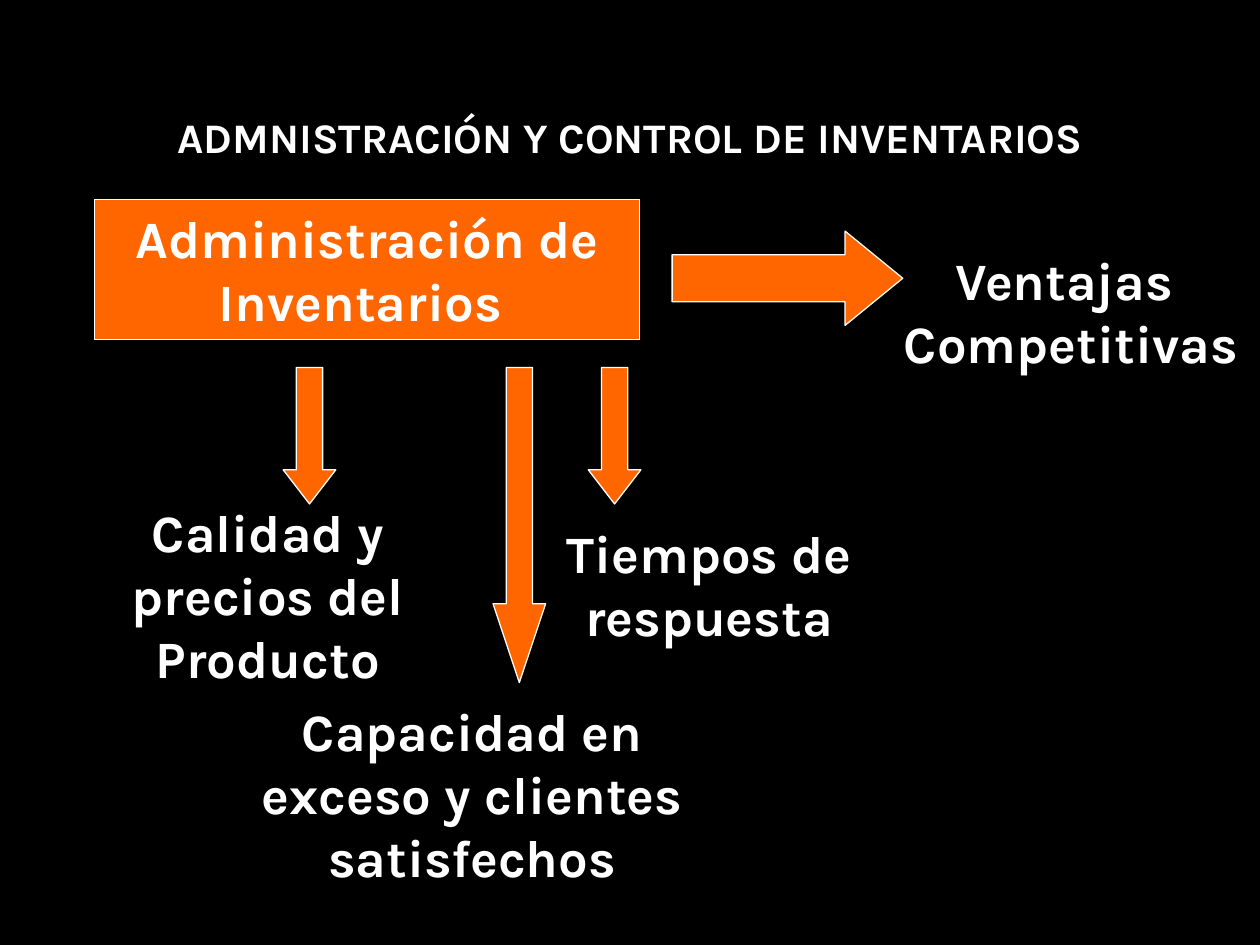
from pptx import Presentation
from pptx.dml.color import RGBColor
from pptx.enum.shapes import MSO_SHAPE
from pptx.enum.text import MSO_ANCHOR, PP_ALIGN
from pptx.util import Cm, Pt

COLORS = {"back": "000000", "fill": "FF6600", "text": "FFFFFF"}
FONT = "Karla"


def color(name):
    return RGBColor.from_string(COLORS[name])


def write(frame, lines, size):
    frame.word_wrap = True
    frame.vertical_anchor = MSO_ANCHOR.TOP
    for i, line in enumerate(lines):
        para = frame.paragraphs[0] if i == 0 else frame.add_paragraph()
        para.alignment = PP_ALIGN.CENTER
        run = para.add_run()
        run.text = line
        font = run.font
        font.name, font.size, font.bold = FONT, Pt(size), True
        font.color.rgb = color("text")


def label(slide, box, *lines, size=30):
    area = slide.shapes.add_textbox(*map(Cm, box))
    write(area.text_frame, lines, size)


def block(slide, kind, box):
    shape = slide.shapes.add_shape(kind, *map(Cm, box))
    shape.shadow.inherit = False
    shape.fill.solid()
    shape.fill.fore_color.rgb = color("fill")
    shape.line.color.rgb = color("text")
    shape.line.width = Pt(0.75)
    return shape


def arrow(slide, kind, box):
    """The head takes a quarter of the arrow's length."""
    shape = block(slide, kind, box)
    wide, high = box[2:]
    shape.adjustments[0] = 0.5
    shape.adjustments[1] = max(wide, high) / 4 / min(wide, high)


def cause(slide, box):
    # Main topic and the arrow to its right
    left, top, wide, high = box
    topic = block(slide, MSO_SHAPE.RECTANGLE, (left, top, 11, high))
    write(topic.text_frame, ["Administración de Inventarios "], 30)
    arrow(slide, MSO_SHAPE.RIGHT_ARROW,
          (left + wide - 4.65, top + 0.64, 4.65, 1.9))


def effects(slide, box):
    # Down arrows, each with its result below
    left, top = box[:2]
    short, long = 2.75, 6.35
    for x, size in ((4.65, short), (8.88, long), (10.8, short)):
        arrow(slide, MSO_SHAPE.DOWN_ARROW, (left + x, top, 1.06, size))
    label(slide, (left, top + 2.54, 8.68, 2.8),
          "Calidad y precios del Producto")
    label(slide, (left + 9.53, top + 2.96, 7.41, 2.8),
          "Tiempos de respuesta")
    label(slide, (left + 2.96, top + 6.56, 11, 2.8),
          "Capacidad en exceso y clientes satisfechos")


def main():
    deck = Presentation()
    deck.slide_width, deck.slide_height = Cm(25.4), Cm(19.05)
    slide = deck.slides.add_slide(deck.slide_layouts[6])
    back = slide.background.fill
    back.solid()
    back.fore_color.rgb = color("back")

    # Title
    label(slide, (0, 2.12, 25.4, 1.27),
          "ADMNISTRACIÓN Y CONTROL DE INVENTARIOS", size=24)
    # Diagram
    cause(slide, (1.9, 4.02, 16.3, 2.82))
    label(slide, (17.78, 4.87, 7.62, 2.8), "Ventajas ", "Competitivas")
    effects(slide, (1.06, 7.41, 16.94, 9.36))

    deck.save("out.pptx")


if __name__ == "__main__":
    main()
